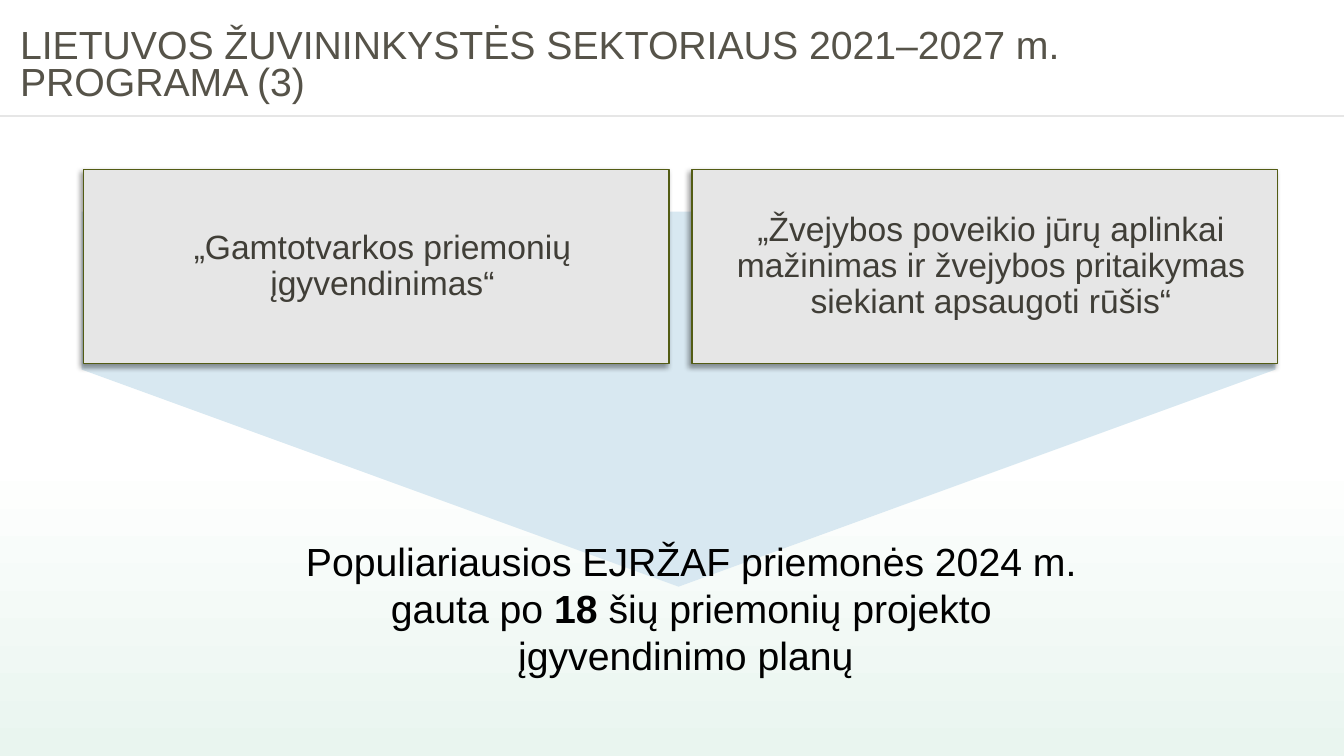
from lxml.etree import SubElement
from pptx import Presentation
from pptx.dml.color import RGBColor
from pptx.enum.shapes import MSO_CONNECTOR, MSO_SHAPE
from pptx.enum.text import MSO_ANCHOR, PP_ALIGN
from pptx.oxml.ns import qn
from pptx.util import Inches, Pt

WIDTH, HEIGHT = 13.33, 7.5
FONT = "Arial"
COLORS = {
    "mint": "E9F5EF", "white": "FFFFFF", "rule": "E6E6E6", "arrow": "D8E8F1",
    "card": "E6E6E6", "card_line": "535C14", "card_text": "403E37",
    "title": "565349", "body": "000000", "shadow": "000000",
}
MEASURES = [
    "„Gamtotvarkos priemonių įgyvendinimas“",
    "„Žvejybos poveikio jūrų aplinkai mažinimas ir žvejybos pritaikymas siekiant apsaugoti rūšis“",
]
SUMMARY = [
    ("Populiariausios EJRŽAF priemonės 2024 m. gauta po ", False),
    ("18 ", True),
    ("šių priemonių projekto įgyvendinimo planų ", False),
]


def color(name):
    """Return the named palette colour."""
    return RGBColor.from_string(COLORS[name])


def add_run(paragraph, text, size, color_name, bold=False):
    """Append one formatted run."""
    run = paragraph.add_run()
    run.text = text
    run.font.name = FONT
    run.font.size = Pt(size)
    run.font.bold = bold
    run.font.color.rgb = color(color_name)


def add_block(slide, preset, box, fill_name):
    """Add a flat borderless shape in the given box."""
    shape = slide.shapes.add_shape(preset, *map(Inches, box))
    shape.shadow.inherit = False
    shape.fill.solid()
    shape.fill.fore_color.rgb = color(fill_name)
    shape.line.fill.background()
    return shape


def add_text_area(slide, box, anchor):
    """Add a wrapping text box and return its first paragraph."""
    frame = slide.shapes.add_textbox(*map(Inches, box)).text_frame
    frame.word_wrap = True
    frame.vertical_anchor = anchor
    return frame.paragraphs[0]


def add_backdrop(slide, box, rule_y):
    """Add the fading backdrop and the rule under the title."""
    backdrop = add_block(slide, MSO_SHAPE.RECTANGLE, box, "white")
    backdrop.fill.gradient()
    backdrop.fill.gradient_angle = 90
    for stop, position, name in zip(backdrop.fill.gradient_stops, (0, 0.4), ("mint", "white")):
        stop.position = position
        stop.color.rgb = color(name)
    left, top, width, _ = box
    rule = slide.shapes.add_connector(
        MSO_CONNECTOR.STRAIGHT, Inches(left), Inches(top + rule_y),
        Inches(left + width), Inches(top + rule_y))
    rule.line.color.rgb = color("rule")
    rule.line.width = Pt(1)
    SubElement(rule._element.spPr, qn("a:effectLst"))


def add_title(slide, box):
    """Add the two-line slide title."""
    paragraph = add_text_area(slide, box, MSO_ANCHOR.MIDDLE)
    paragraph.line_spacing = 0.8
    add_run(paragraph, "LIETUVOS ŽUVININKYSTĖS SEKTORIAUS 2021–2027 m.", 28, "title")
    paragraph.add_line_break()
    add_run(paragraph, "PROGRAMA (3)", 28, "title")


def add_down_arrow(slide, box):
    """Add a pentagon turned to point down, filling the box."""
    left, top, width, height = box
    turned_box = (left + (width - height) / 2, top + (height - width) / 2, height, width)
    arrow = add_block(slide, MSO_SHAPE.PENTAGON, turned_box, "arrow")
    arrow.rotation = 90
    arrow.adjustments[0] = 0.579


def add_card_shadow(card):
    """Give a card its soft shadow towards the lower left."""
    effects = card._element.spPr.find(qn("a:effectLst"))
    shadow = SubElement(effects, qn("a:outerShdw"), blurRad=str(Pt(4)), dist=str(Pt(3)),
                        dir="8100000", algn="tr", rotWithShape="0")
    tint = SubElement(shadow, qn("a:srgbClr"), val=COLORS["shadow"])
    SubElement(tint, qn("a:alpha"), val="40000")


def add_cards(slide, box, gap):
    """Add one card per measure in equal columns."""
    left, top, width, height = box
    card_width = (width - gap * (len(MEASURES) - 1)) / len(MEASURES)
    for column, measure in enumerate(MEASURES):
        card_box = (left + column * (card_width + gap), top, card_width, height)
        card = add_block(slide, MSO_SHAPE.RECTANGLE, card_box, "card")
        card.line.color.rgb = color("card_line")
        card.line.width = Pt(1)
        add_card_shadow(card)
        card.text_frame.word_wrap = True
        card.text_frame.vertical_anchor = MSO_ANCHOR.MIDDLE
        paragraph = card.text_frame.paragraphs[0]
        paragraph.alignment = PP_ALIGN.CENTER
        paragraph.line_spacing = 0.9
        paragraph._p.get_or_add_pPr().set("marL", str(Inches(0.12)))
        add_run(paragraph, measure, 24, "card_text")


def add_summary(slide, box):
    """Add the closing statement with its bold figure."""
    paragraph = add_text_area(slide, box, MSO_ANCHOR.TOP)
    paragraph.alignment = PP_ALIGN.CENTER
    paragraph.space_after = Pt(18)
    for text, bold in SUMMARY:
        add_run(paragraph, text, 28, "body", bold)


def main():
    """Build and save the presentation."""
    presentation = Presentation()
    presentation.slide_width = Inches(WIDTH)
    presentation.slide_height = Inches(HEIGHT)
    slide = presentation.slides.add_slide(presentation.slide_layouts[6])
    add_backdrop(slide, (0, 0, WIDTH, HEIGHT), 1.15)
    add_down_arrow(slide, (0.81, 2.1, 11.84, 3.72))
    add_cards(slide, (0.83, 1.68, 11.84, 1.93), 0.23)
    add_summary(slide, (2.7, 5.28, 8.31, 1.51))
    add_title(slide, (0.1, 0.2, 12.18, 0.92))
    presentation.save("out.pptx")


if __name__ == "__main__":
    main()
